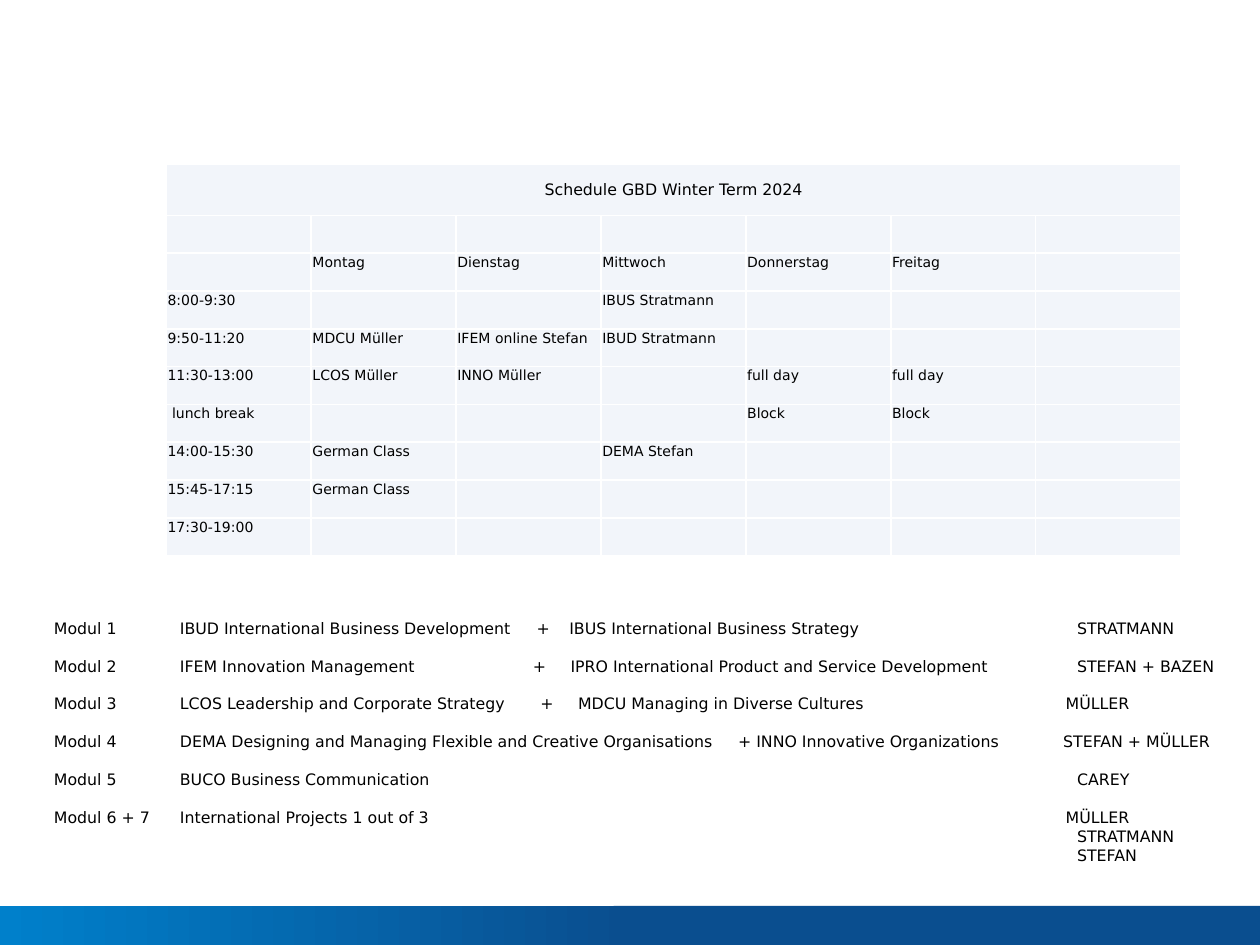
from dataclasses import dataclass

import pptx
import pptx.dml.color
import pptx.enum.shapes
import pptx.enum.text
import pptx.oxml
import pptx.oxml.ns
import pptx.util
from lxml import etree

RGBColor = pptx.dml.color.RGBColor
Inches = pptx.util.Inches
Pt = pptx.util.Pt
qn = pptx.oxml.ns.qn

BLACK = RGBColor(0x00, 0x00, 0x00)
WHITE = RGBColor(0xFF, 0xFF, 0xFF)
CELL_FILL = RGBColor(0xF2, 0xF5, 0xFA)
LIGHT_BLUE = RGBColor(0x00, 0x80, 0xCB)
DARK_BLUE = RGBColor(0x0A, 0x4E, 0x8F)
FONT = "DejaVu Sans"
WIDTH, HEIGHT = 10, 7.5
FOOTER_HEIGHT = 0.31
COLUMN_WIDTH, TITLE_ROW, DAY_ROW = 1.15, 0.41, 0.3
TITLE_TAB = 1.0

SCHEDULE_TITLE = "Schedule GBD Winter Term 2024"
SCHEDULE = [
    ["", "", "", "", "", "", ""],
    ["", "Montag", "Dienstag", "Mittwoch", "Donnerstag", "Freitag", ""],
    ["8:00-9:30", "", "", "IBUS Stratmann", "", "", ""],
    ["9:50-11:20", "MDCU Müller", "IFEM online Stefan", "IBUD Stratmann", "", "", ""],
    ["11:30-13:00", "LCOS Müller", "INNO Müller", "", "full day", "full day", ""],
    [" lunch break", "", "", "", "Block", "Block", ""],
    ["14:00-15:30", "German Class", "", "DEMA Stefan", "", "", ""],
    ["15:45-17:15", "German Class", "", "", "", "", ""],
    ["17:30-19:00", "", "", "", "", "", ""],
]


@dataclass
class Entry:
    """A line of the module list; every tab stop is in inches from the text edge."""
    texts: list[str]
    tabs: list[float]
    gap: float = 10.8


MODULES = [
    Entry(["Modul 1", "IBUD International Business Development", "+",
           "IBUS International Business Strategy", "STRATMANN"],
          [TITLE_TAB, 3.83, 4.09, 8.12], gap=0),
    Entry(["Modul 2", "IFEM Innovation Management", "+",
           "IPRO International Product and Service Development", "STEFAN + BAZEN"],
          [TITLE_TAB, 3.8, 4.1, 8.12]),
    Entry(["Modul 3", "LCOS Leadership and Corporate Strategy", "+",
           "MDCU Managing in Diverse Cultures", "MÜLLER"],
          [TITLE_TAB, 3.86, 4.16, 8.03]),
    Entry(["Modul 4", "DEMA Designing and Managing Flexible and Creative Organisations",
           "+ INNO Innovative Organizations", "STEFAN + MÜLLER"],
          [TITLE_TAB, 5.43, 8.01]),
    Entry(["Modul 5", "BUCO Business Communication", "CAREY"], [TITLE_TAB, 8.12]),
    Entry(["Modul 6 + 7", "International Projects 1 out of 3", "MÜLLER"], [TITLE_TAB, 8.03]),
    Entry(["", "STRATMANN"], [8.12], gap=0),
    Entry(["", "STEFAN"], [8.12], gap=0),
]


def add_span(para, text: str, size: float) -> None:
    span = para.add_run()
    span.text = text
    span.font.name = FONT
    span.font.size = Pt(size)
    span.font.color.rgb = BLACK


def add_footer_bar(page, left: float, width: float):
    bar = page.shapes.add_shape(
        pptx.enum.shapes.MSO_SHAPE.RECTANGLE, Inches(left),
        Inches(HEIGHT - FOOTER_HEIGHT), Inches(width), Inches(FOOTER_HEIGHT))
    bar.shadow.inherit = False
    bar.line.fill.background()
    return bar


def add_footer(page) -> None:
    solid = add_footer_bar(page, 4.87, WIDTH - 4.87)
    solid.fill.solid()
    solid.fill.fore_color.rgb = DARK_BLUE
    blend = add_footer_bar(page, 0, WIDTH / 2)
    blend.fill.gradient()
    blend.fill.gradient_angle = 0
    for stop, position, color in zip(blend.fill.gradient_stops, (0, 1), (LIGHT_BLUE, DARK_BLUE)):
        stop.position = position
        stop.color.rgb = color


def add_modules(page, entries: list[Entry]) -> None:
    box = page.shapes.add_textbox(Inches(0.33), Inches(4.86), Inches(13.95), Inches(2.1))
    frame = box.text_frame
    frame.word_wrap = True
    for index, entry in enumerate(entries):
        para = frame.add_paragraph() if index else frame.paragraphs[0]
        stops = etree.SubElement(para._p.get_or_add_pPr(), qn("a:tabLst"))
        for tab in entry.tabs:
            etree.SubElement(stops, qn("a:tab"), pos=str(Inches(tab)), algn="l")
        para.space_before = Pt(entry.gap)
        add_span(para, "\t".join(entry.texts), 9)


def format_cell(cell, text: str, size: float) -> None:
    cell.margin_left = cell.margin_right = cell.margin_top = Inches(0.01)
    cell.margin_bottom = 0
    cell.fill.solid()
    cell.fill.fore_color.rgb = CELL_FILL
    properties = cell._tc.get_or_add_tcPr()
    for index, side in enumerate(("lnL", "lnR", "lnT", "lnB")):
        border = etree.Element(qn(f"a:{side}"), w=str(Pt(1)))
        fill = etree.SubElement(border, qn("a:solidFill"))
        etree.SubElement(fill, qn("a:srgbClr"), val=str(WHITE))
        properties.insert(index, border)
    para = cell.text_frame.paragraphs[0]
    if text:
        add_span(para, text, size)
    else:
        etree.SubElement(para._p, qn("a:endParaRPr"), sz=str(int(size * 100)))


def add_schedule(page) -> None:
    rows = [[SCHEDULE_TITLE] + [""] * 6] + SCHEDULE
    columns = len(rows[0])
    table = page.shapes.add_table(
        len(rows), columns, Inches(1.32), Inches(1.3), Inches(columns * COLUMN_WIDTH),
        Inches(TITLE_ROW + len(SCHEDULE) * DAY_ROW)).table
    table.first_row = table.horz_banding = False
    for column in table.columns:
        column.width = Inches(COLUMN_WIDTH)
    for index, texts in enumerate(rows):
        table.rows[index].height = Inches(DAY_ROW if index else TITLE_ROW)
        for cell, text in zip(table.rows[index].cells, texts):
            format_cell(cell, text, 8 if index else 9)
    heading = table.cell(0, 0)
    heading.merge(table.cell(0, columns - 1))
    heading.vertical_anchor = pptx.enum.text.MSO_ANCHOR.MIDDLE
    heading.text_frame.paragraphs[0].alignment = pptx.enum.text.PP_ALIGN.CENTER


def main() -> None:
    deck = pptx.Presentation()
    deck.slide_width, deck.slide_height = Inches(WIDTH), Inches(HEIGHT)
    page = deck.slides.add_slide(deck.slide_layouts[6])
    add_footer(page)
    add_modules(page, MODULES)
    add_schedule(page)
    deck.save("out.pptx")


if __name__ == "__main__":
    main()
